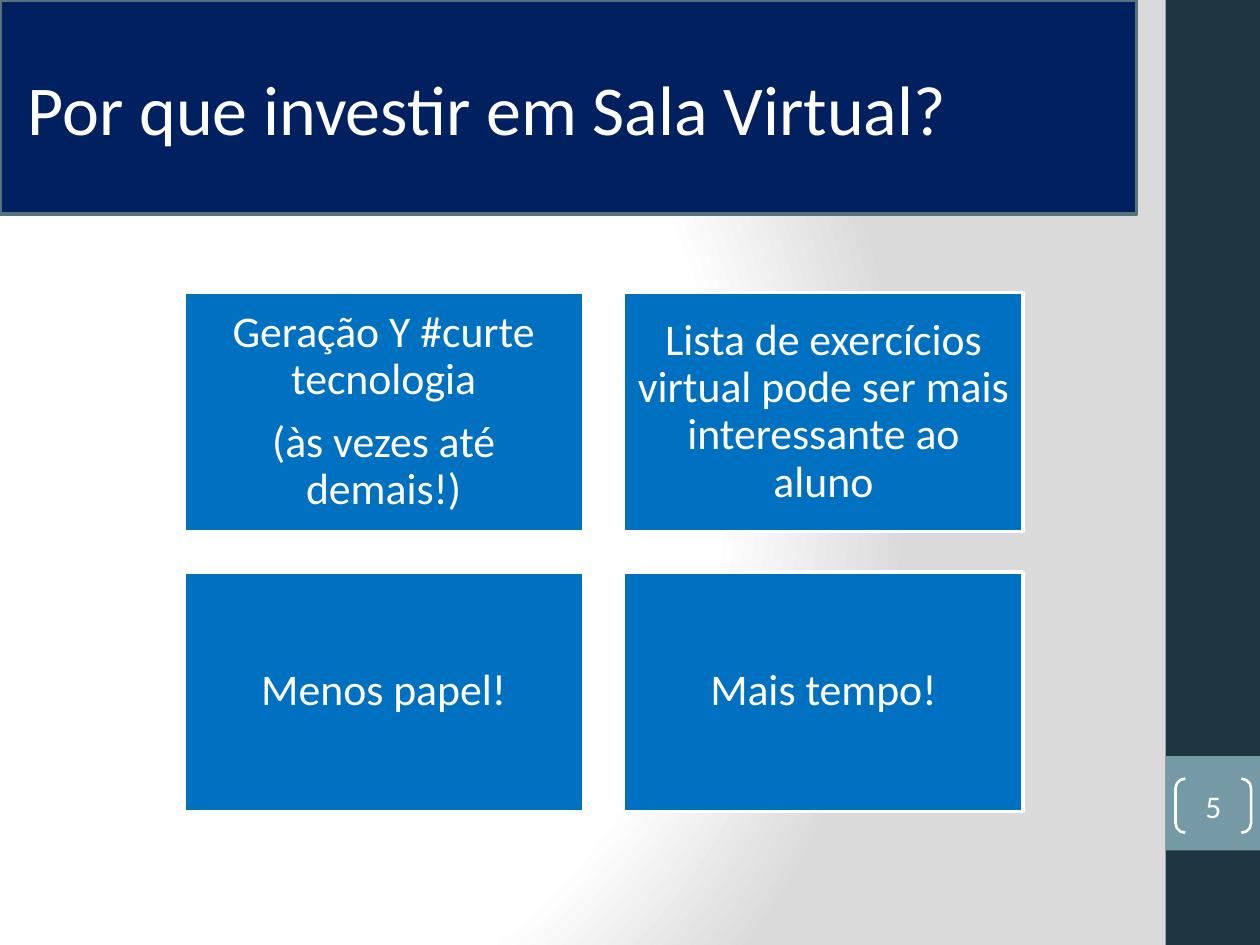
from dataclasses import dataclass

from pptx import Presentation
from pptx.dml.color import RGBColor
from pptx.enum.shapes import MSO_SHAPE as Preset
from pptx.enum.text import MSO_ANCHOR as Anchor, PP_ALIGN as Align
from pptx.oxml import parse_xml
from pptx.oxml.ns import nsdecls
from pptx.shapes.autoshape import Shape
from pptx.slide import Slide
from pptx.util import Inches, Pt

WIDTH, HEIGHT = 10, 7.5
FONT = "Calibri"
WHITE, NAVY, BLUE = "FFFFFF", "002060", "0070C0"
DARK_TEAL, TEAL, SLATE, GREY = "1D3641", "759AA5", "57727A", "DADADA"


@dataclass(frozen=True)
class Box:
    """A position and size in inches."""
    left: float
    top: float
    width: float
    height: float


@dataclass(frozen=True)
class Reason:
    """One card of the grid, placed by column and row."""
    column: int
    row: int
    paragraphs: tuple[str, ...]


@dataclass(frozen=True)
class Grid:
    """Equal cells with a fixed step between columns and rows."""
    origin: Box
    column_step: float
    row_step: float

    def cell(self, column: int, row: int) -> Box:
        """Return the box of one cell."""
        first = self.origin
        return Box(first.left + column * self.column_step,
                   first.top + row * self.row_step, first.width, first.height)


SIDEBAR = Box(0.925 * WIDTH, 0, 0.075 * WIDTH, HEIGHT)
NUMBER_PANEL = Box(SIDEBAR.left, 0.8 * HEIGHT, SIDEBAR.width, 0.1 * HEIGHT)
NUMBER_BRACKETS = Box(9.33, 6.18, 0.6, 0.43)
TITLE_BANNER = Box(0, 0, 9.02, 1.7)
REASON_GRID = Grid(Box(1.46, 2.32, 3.17, 1.9), column_step=3.49, row_step=2.22)
REASONS = (
    Reason(0, 0, ("Geração Y #curte tecnologia", "(às vezes até demais!)")),
    Reason(1, 0, ("Lista de exercícios virtual pode ser mais interessante ao aluno",)),
    Reason(0, 1, ("Menos papel!",)),
    Reason(1, 1, ("Mais tempo!",)),
)


def color(value: str) -> RGBColor:
    """Turn a hex string into a colour."""
    return RGBColor.from_string(value)


def add_box(slide: Slide, box: Box, *, preset: Preset = Preset.RECTANGLE,
            fill: str | None = None, line: str | None = None,
            line_width: float = 2) -> Shape:
    """Add a flat preset shape."""
    shape = slide.shapes.add_shape(
        preset, *(Inches(n) for n in (box.left, box.top, box.width, box.height)))
    shape.shadow.inherit = False
    if fill:
        shape.fill.solid()
        shape.fill.fore_color.rgb = color(fill)
    else:
        shape.fill.background()
    if line:
        shape.line.color.rgb = color(line)
        shape.line.width = Pt(line_width)
    else:
        shape.line.fill.background()
    return shape


def write(shape: Shape, *paragraphs: str, size: float, align: Align = Align.CENTER,
          insets: tuple[float, float, float, float] = (0, 0, 0, 0),
          line_spacing: float = 1, space_after: float = 0) -> None:
    """Write formatted, vertically centred paragraphs in a shape."""
    frame = shape.text_frame
    frame.word_wrap = True
    frame.vertical_anchor = Anchor.MIDDLE
    (frame.margin_left, frame.margin_top,
     frame.margin_right, frame.margin_bottom) = (Inches(n) for n in insets)
    for index, text in enumerate(paragraphs):
        paragraph = frame.add_paragraph() if index else frame.paragraphs[0]
        paragraph.alignment = align
        paragraph.line_spacing = line_spacing
        paragraph.space_after = Pt(space_after)
        run = paragraph.add_run()
        run.text = text
        run.font.name = FONT
        run.font.size = Pt(size)
        run.font.color.rgb = color(WHITE)


def set_background(slide: Slide) -> None:
    """Give the slide a circular white to grey gradient."""
    stops = "".join(
        f'<a:gs pos="{share * 1000}"><a:srgbClr val="{value}"/></a:gs>'
        for share, value in ((0, WHITE), (75, WHITE), (100, GREY)))
    slide.element.cSld.insert(0, parse_xml(
        f'<p:bg {nsdecls("p", "a")}><p:bgPr><a:gradFill rotWithShape="1">'
        f'<a:gsLst>{stops}</a:gsLst><a:path path="circle">'
        '<a:fillToRect l="20000" t="50000" r="100000" b="50000"/></a:path>'
        '</a:gradFill><a:effectLst/></p:bgPr></p:bg>'))


def add_reason(slide: Slide, reason: Reason) -> None:
    """Draw one reason card."""
    card = add_box(slide, REASON_GRID.cell(reason.column, reason.row),
                   fill=BLUE, line=WHITE)
    write(card, *reason.paragraphs, size=25, insets=(0.1, 0.1, 0.1, 0.1),
          line_spacing=0.9, space_after=8.75)


def main() -> None:
    """Build and save the slide."""
    presentation = Presentation()
    presentation.slide_width, presentation.slide_height = Inches(WIDTH), Inches(HEIGHT)
    slide = presentation.slides.add_slide(presentation.slide_layouts[6])
    set_background(slide)
    add_box(slide, SIDEBAR, fill=DARK_TEAL)
    add_box(slide, NUMBER_PANEL, fill=TEAL)
    brackets = add_box(slide, NUMBER_BRACKETS, preset=Preset.DOUBLE_BRACKET,
                       line=WHITE, line_width=1.5)
    brackets.adjustments[0] = 0.18
    write(brackets, "5", size=18)
    banner = add_box(slide, TITLE_BANNER, fill=NAVY, line=SLATE)
    write(banner, "Por que investir em Sala Virtual?", size=40, align=Align.LEFT,
          insets=(0.22, 0.05, 0.1, 0.05))
    for reason in REASONS:
        add_reason(slide, reason)
    presentation.save("out.pptx")


if __name__ == "__main__":
    main()
